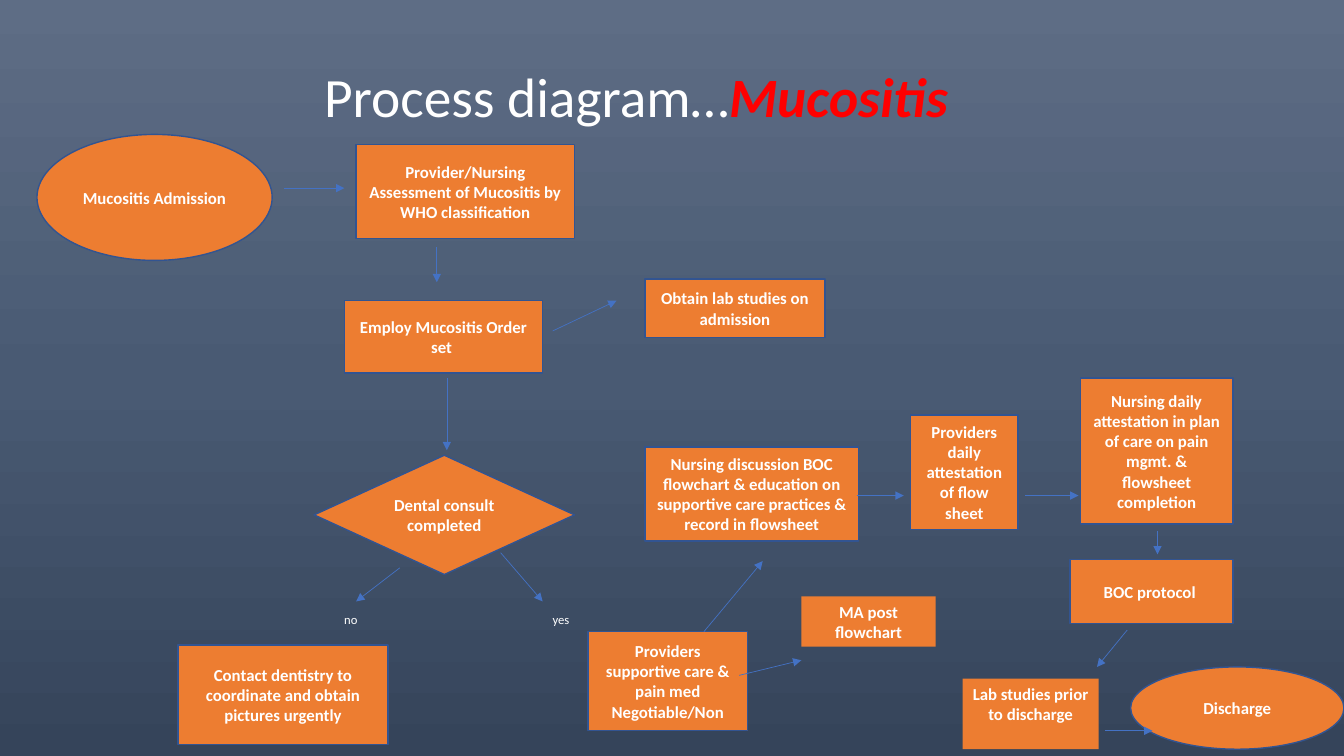
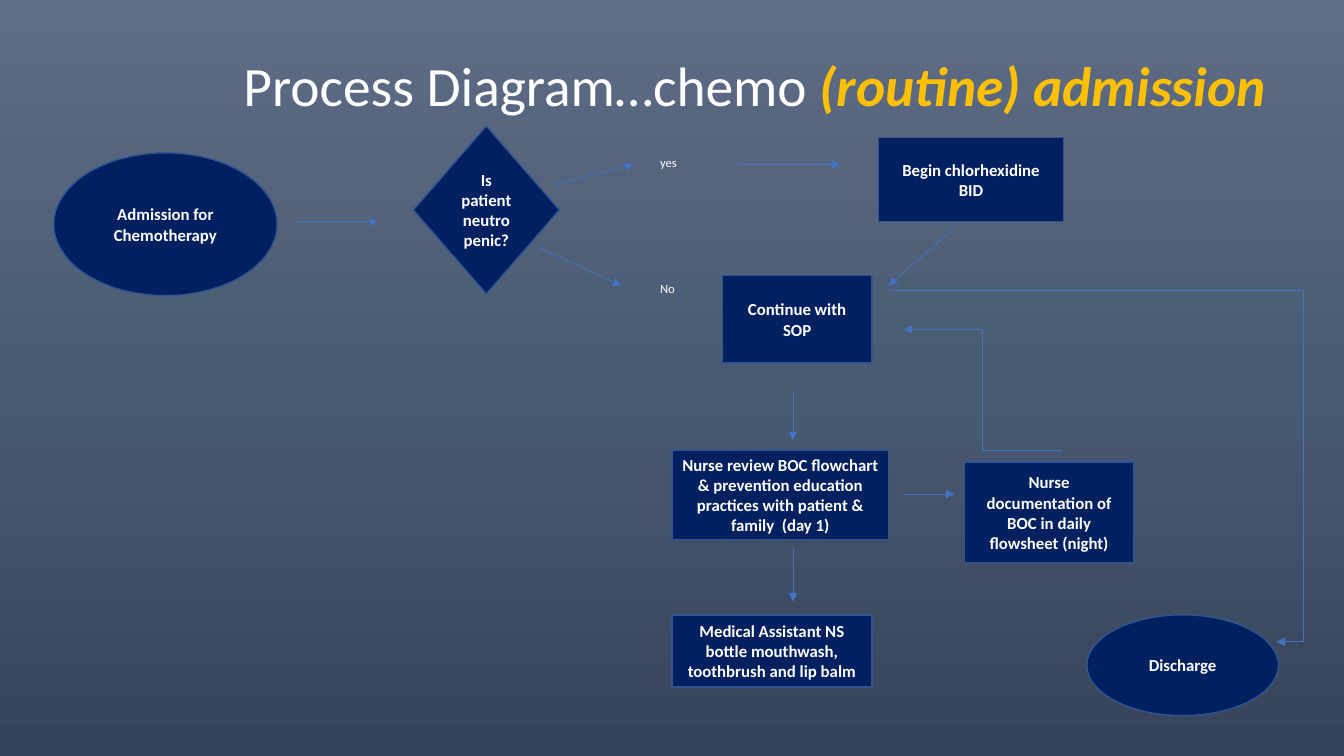
import copy
from dataclasses import dataclass
from typing import Any, NamedTuple

import lxml.etree
import pptx
import pptx.dml.color
import pptx.enum.shapes
import pptx.enum.text
import pptx.oxml.ns
import pptx.util

FORM = pptx.enum.shapes.MSO_SHAPE
LINK = pptx.enum.shapes.MSO_CONNECTOR
ALIGN = pptx.enum.text.PP_ALIGN
ANCHOR = pptx.enum.text.MSO_ANCHOR
qn = pptx.oxml.ns.qn

WIDE, HIGH = pptx.util.Inches(13.333), pptx.util.Inches(7.5)
COLS, ROWS = 80, 45


@dataclass(frozen=True)
class Theme:
    font: str = "Calibri"
    ink: str = "FFFFFF"
    edge: str = "325491"
    arrow: str = "4472C4"
    back: tuple[str, ...] = ("5E6D85", "495A73", "35445A")
    orange: str = "ED7D31"
    navy: str = "002060"
    red: str = "FF0000"
    gold: str = "FFC000"
    head: float = 39.6
    body: float = 12
    small: float = 9
    rim: float = 1
    thin: float = 0.5


THEME = Theme()


class Area(NamedTuple):
    """Left, top, width and height in grid columns and rows."""
    x: float
    y: float
    w: float
    h: float


class Node(NamedTuple):
    form: Any
    area: Area
    text: str


class Label(NamedTuple):
    area: Area
    text: str


class Arrow(NamedTuple):
    x1: float
    y1: float
    x2: float
    y2: float
    bend: float | None = None  # share of the width where an elbow turns


class Run(NamedTuple):
    text: str
    size: float
    color: str = THEME.ink
    bold: bool = False
    italic: bool = False


class Chart(NamedTuple):
    fill: str
    area: Area
    title: tuple[Run, ...]
    nodes: tuple[Node, ...]
    labels: tuple[Label, ...]
    arrows: tuple[Arrow, ...]


OVAL, STEP = FORM.OVAL, FORM.FLOWCHART_PROCESS
TEST, NOTE = FORM.FLOWCHART_DECISION, FORM.RECTANGLE

CHARTS = (
    Chart(
        THEME.orange,
        Area(18.7, 3.7, 59.4, 4.4),
        (Run("Process diagram…", THEME.head),
         Run("Mucositis", THEME.head, THEME.red, True, True)),
        (
            Node(OVAL, Area(2.2, 8, 14, 7.5), "Mucositis Admission"),
            Node(OVAL, Area(67.3, 39.7, 12.7, 4.9), "Discharge"),
            Node(STEP, Area(21.2, 8.6, 13, 5.6),
                 "Provider/Nursing Assessment of Mucositis by WHO classification"),
            Node(TEST, Area(18.7, 27.1, 15.5, 7.1), "Dental consult completed"),
            Node(STEP, Area(10.6, 38.4, 12.5, 5.9),
                 "Contact dentistry to coordinate and obtain pictures urgently"),
            Node(STEP, Area(35, 37.6, 9.5, 5.9),
                 "Providers supportive care & pain med\nNegotiable/Non"),
            Node(STEP, Area(20.5, 17.9, 11.8, 4.3), "Employ Mucositis Order set "),
            Node(STEP, Area(38.4, 16.6, 10.7, 3.5), "Obtain lab studies on admission"),
            Node(STEP, Area(38.4, 26.6, 12.7, 5.6),
                 "Nursing discussion BOC flowchart & education on supportive care "
                 "practices & record in flowsheet"),
            Node(STEP, Area(54.2, 24.7, 6.4, 6.8),
                 "Providers daily attestation of flow sheet"),
            Node(STEP, Area(64.3, 22.5, 9.1, 8.7),
                 "Nursing daily attestation in plan of care on pain mgmt. & "
                 "flowsheet completion"),
            Node(STEP, Area(63.7, 33.3, 9.7, 3.8), "BOC protocol "),
            Node(NOTE, Area(47.7, 35.5, 8, 3), "MA post flowchart"),
            Node(NOTE, Area(57.3, 40.4, 8.1, 4.2), "Lab studies prior to discharge"),
        ),
        (Label(Area(19.9, 36.1, 3.4, 1.5), "no"),
         Label(Area(32.3, 36.1, 3.3, 1.5), "yes")),
        (
            Arrow(16.9, 11.2, 20.5, 11.2),
            Arrow(26, 14.7, 26, 16.8),
            Arrow(32.9, 19.7, 36.7, 17.9),
            Arrow(26.6, 22.5, 26.6, 26.8),
            Arrow(23.8, 33.8, 21.2, 35.8),
            Arrow(29.8, 32.9, 32.3, 35.8),
            Arrow(41.9, 37.6, 45.4, 33.4),
            Arrow(44, 40.2, 47.7, 39.3),
            Arrow(51, 29.5, 53.8, 29.5),
            Arrow(61, 29.5, 64.2, 29.5),
            Arrow(68.9, 31.6, 68.9, 33),
            Arrow(67.1, 37.5, 65.3, 39.7),
            Arrow(65.8, 43.5, 68.6, 43.5),
        ),
    ),
    Chart(
        THEME.navy,
        Area(13.9, 3.4, 63.2, 3.7),
        (Run("Process Diagram…chemo ", THEME.head),
         Run("(routine) admission", THEME.head, THEME.gold, True, True)),
        (
            Node(OVAL, Area(3.2, 9.1, 13.3, 8.5), "Admission for Chemotherapy"),
            Node(OVAL, Area(64.7, 36.6, 11.4, 6), "Discharge"),
            Node(STEP, Area(40, 26.8, 12.9, 5.3),
                 "Nurse review BOC flowchart & prevention education practices with "
                 "patient & family  (day 1)"),
            Node(STEP, Area(57.4, 27.5, 10.1, 6),
                 "Nurse documentation of BOC in daily flowsheet (night)"),
            Node(STEP, Area(40, 36.6, 11.9, 4.3),
                 "Medical Assistant NS bottle mouthwash, toothbrush and lip balm"),
            Node(TEST, Area(24.6, 7.5, 8.7, 10), "Is patient neutropenic?"),
            Node(STEP, Area(52.3, 8.2, 11, 5), "Begin chlorhexidine BID"),
            Node(STEP, Area(43, 16.4, 8.9, 5.2), "Continue with SOP"),
        ),
        (Label(Area(38.7, 8.9, 3.6, 1.5), "yes"),
         Label(Area(38.7, 16.4, 3.1, 1.5), "No")),
        (
            Arrow(17.6, 13.2, 22.5, 13.2),
            Arrow(32.9, 11, 37.7, 9.8),
            Arrow(43.9, 9.8, 50, 9.8),
            Arrow(32, 14.7, 37, 17),
            Arrow(56.8, 13.6, 52.9, 17),
            Arrow(47.2, 23.3, 47.2, 26.2),
            Arrow(47.2, 32.6, 47.2, 35.8),
            Arrow(53.8, 29.4, 56.8, 29.4),
            Arrow(63.2, 26.8, 53.8, 19.6, 0.5),
            Arrow(53, 17.3, 76, 38.2, 1.07),
        ),
    ),
)


def across(cols: float) -> int:
    return round(WIDE * cols / COLS)


def down(rows: float) -> int:
    return round(HIGH * rows / ROWS)


def place(area: Area) -> tuple[int, int, int, int]:
    return across(area.x), down(area.y), across(area.w), down(area.h)


def tint(code: str) -> Any:
    return pptx.dml.color.RGBColor.from_string(code)


def apply(item: Any, **values: Any) -> None:
    for name, value in values.items():
        setattr(item, name, value)


def write(shape: Any, lines: list[tuple[Run, ...]], anchor: Any, **format: Any) -> None:
    """Fill a shape with one paragraph per line of runs."""
    frame = shape.text_frame
    apply(frame, word_wrap=True, vertical_anchor=anchor)
    for index, line in enumerate(lines):
        para = frame.add_paragraph() if index else frame.paragraphs[0]
        apply(para, **format)
        for run in line:
            part = para.add_run()
            part.text = run.text
            apply(part.font, name=THEME.font, size=pptx.util.Pt(run.size),
                  bold=run.bold, italic=run.italic)
            part.font.color.rgb = tint(run.color)


def draw_node(slide: Any, node: Node, fill: str) -> None:
    shape = slide.shapes.add_shape(node.form, *place(node.area))
    shape.shadow.inherit = False
    shape.fill.solid()
    shape.fill.fore_color.rgb = tint(fill)
    if node.form == NOTE:
        shape.line.fill.background()
    else:
        shape.line.color.rgb = tint(THEME.edge)
        shape.line.width = pptx.util.Pt(THEME.rim)
    lines = [(Run(text, THEME.body, bold=True),) for text in node.text.split("\n")]
    anchor = ANCHOR.TOP if node.form == NOTE else ANCHOR.MIDDLE
    write(shape, lines, anchor, alignment=ALIGN.CENTER)


def draw_text(slide: Any, area: Area, runs: tuple[Run, ...], anchor: Any,
              **format: Any) -> None:
    write(slide.shapes.add_textbox(*place(area)), [runs], anchor, **format)


def draw_arrow(slide: Any, arrow: Arrow) -> None:
    kind = LINK.STRAIGHT if arrow.bend is None else LINK.ELBOW
    link = slide.shapes.add_connector(
        kind, across(arrow.x1), down(arrow.y1), across(arrow.x2), down(arrow.y2))
    link.line.color.rgb = tint(THEME.arrow)
    link.line.width = pptx.util.Pt(THEME.thin)
    props = link.element.spPr
    add = lxml.etree.SubElement
    add(props.find(qn("a:ln")), qn("a:tailEnd"), type="triangle")
    add(props, qn("a:effectLst"))
    if arrow.bend is not None:
        guides = props.find(qn("a:prstGeom")).find(qn("a:avLst"))
        add(guides, qn("a:gd"), name="adj1", fmla=f"val {round(arrow.bend * 100000)}")


def paint(master: Any) -> None:
    """Give the master a top-down gradient that every slide inherits."""
    fill = master.background.fill
    fill.gradient()
    fill.gradient_angle = 270
    stops = master.element.find(".//" + qn("p:bg")).find(".//" + qn("a:gsLst"))
    stops.append(copy.deepcopy(stops[-1]))
    last = len(THEME.back) - 1
    for index, (stop, code) in enumerate(zip(fill.gradient_stops, THEME.back)):
        stop.color.rgb = tint(code)
        stop.position = index / last


def draw_chart(slide: Any, chart: Chart) -> None:
    draw_text(slide, chart.area, chart.title, ANCHOR.MIDDLE, line_spacing=0.9)
    for node in chart.nodes:
        draw_node(slide, node, chart.fill)
    for label in chart.labels:
        draw_text(slide, label.area, (Run(label.text, THEME.small),), ANCHOR.TOP)
    for arrow in chart.arrows:
        draw_arrow(slide, arrow)


def main() -> None:
    deck = pptx.Presentation()
    apply(deck, slide_width=WIDE, slide_height=HIGH)
    paint(deck.slide_master)
    for chart in CHARTS:
        draw_chart(deck.slides.add_slide(deck.slide_layouts[6]), chart)
    deck.save("out.pptx")


if __name__ == "__main__":
    main()
